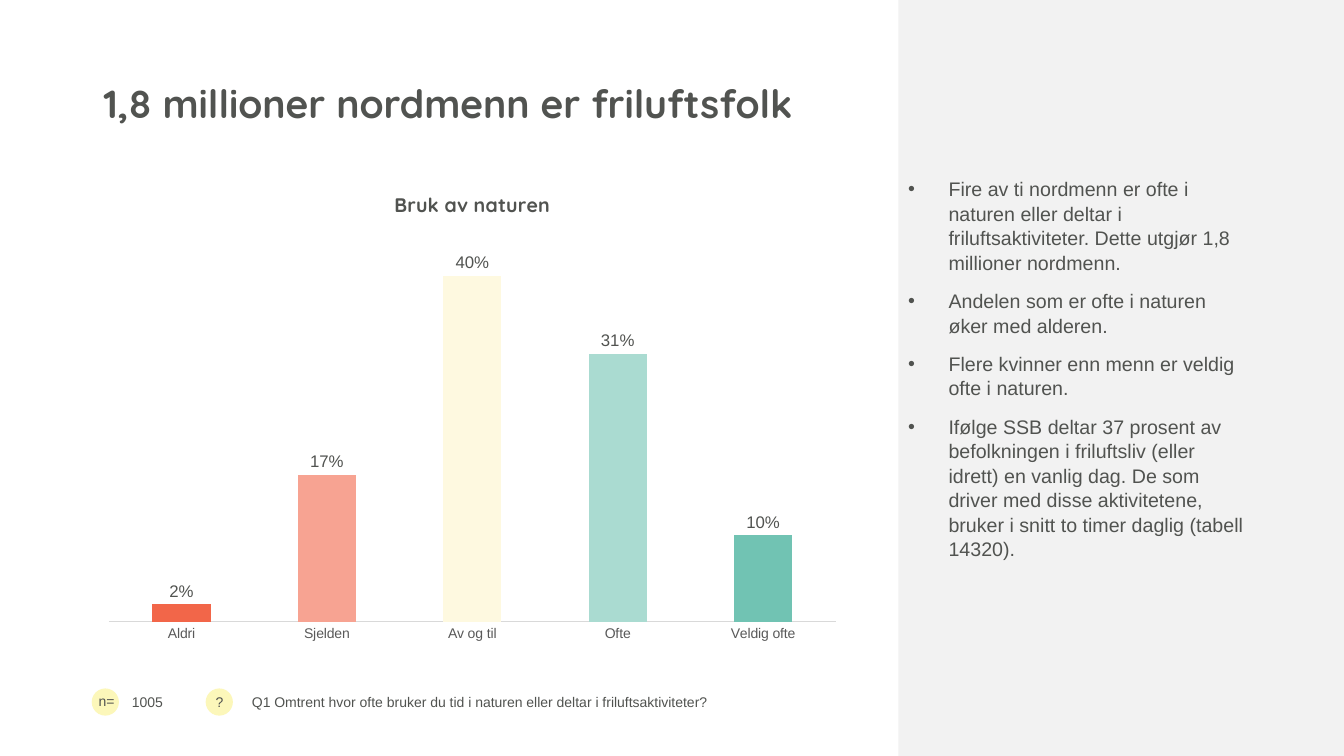
from pptx import Presentation
from pptx.chart.data import CategoryChartData
from pptx.dml.color import RGBColor
from pptx.enum.chart import XL_CHART_TYPE, XL_LABEL_POSITION, XL_TICK_MARK
from pptx.enum.shapes import MSO_SHAPE
from pptx.enum.text import MSO_ANCHOR
from pptx.util import Inches, Pt
from lxml.etree import SubElement
from pptx.oxml.ns import qn

INK = RGBColor(0x51, 0x53, 0x50)
GREY = RGBColor(0x59, 0x59, 0x59)
RULE = RGBColor(0xD9, 0xD9, 0xD9)
PANEL = RGBColor(0xF2, 0xF2, 0xF2)
DOT = RGBColor(0xFC, 0xF7, 0xBA)
TEAL = RGBColor(0x71, 0xC3, 0xB3)
BARS = [RGBColor(0xF2, 0x66, 0x49), RGBColor(0xF7, 0xA3, 0x92),
        RGBColor(0xFE, 0xF9, 0xE0), RGBColor(0xAA, 0xDB, 0xD1), TEAL]

deck = Presentation()
deck.slide_width, deck.slide_height = Inches(13.33), Inches(7.5)
slide = deck.slides.add_slide(deck.slide_layouts[6])
shapes = slide.shapes

LEFT, TOP, SPLIT, RIGHT = 0.93, 1.7, 8.91, 12.45
FOOT, ROUND = 6.83, 0.27


def style(font, size, name="Arial", color=INK, bold=False):
    font.size, font.name, font.bold = Pt(size), name, bold
    font.color.rgb = color


def text(lines, x, y, w, h, size=10, anchor=MSO_ANCHOR.TOP, bullet=False,
         gap=0, line=1.0, **look):
    frame = shapes.add_textbox(*map(Inches, (x, y, w, h))).text_frame
    frame.word_wrap, frame.vertical_anchor = True, anchor
    for i, words in enumerate(lines):
        para = frame.paragraphs[0] if i == 0 else frame.add_paragraph()
        para.line_spacing = line
        if i:
            para.space_before = Pt(gap)
        if bullet:
            props = para._p.get_or_add_pPr()
            props.set("marL", str(Inches(0.4)))
            props.set("indent", str(-Inches(0.4)))
            SubElement(props, qn("a:buFont")).set("typeface", "Arial")
            SubElement(props, qn("a:buChar")).set("char", "•")
        run = para.add_run()
        run.text = words
        style(run.font, size, **look)


blocks = [
    (MSO_SHAPE.RECTANGLE, SPLIT, 0, 13.33 - SPLIT, 7.5, PANEL),
    (MSO_SHAPE.OVAL, 0.91, FOOT, ROUND, ROUND, DOT),
    (MSO_SHAPE.OVAL, 2.04, FOOT, ROUND, ROUND, DOT),
]
for kind, x, y, w, h, color in blocks:
    block = shapes.add_shape(kind, *map(Inches, (x, y, w, h)))
    block.shadow.inherit = False
    block.fill.solid()
    block.fill.fore_color.rgb = color
    block.line.fill.background()

text(["1,8 millioner nordmenn er friluftsfolk"], LEFT, 0.39, RIGHT - LEFT, 0.92,
     size=28, anchor=MSO_ANCHOR.BOTTOM, line=0.9, name="Quicksand", bold=True)
text(["n="], 0.88, 6.82, 0.45, ROUND)
text(["?"], 2.04, FOOT, 0.3, ROUND)
text(["1005"], 1.21, FOOT, 0.74, ROUND, anchor=MSO_ANCHOR.MIDDLE)
text(["Q1 Omtrent hvor ofte bruker du tid i naturen eller deltar i friluftsaktiviteter?"],
     2.4, 6.67, RIGHT - 2.4, 0.58, anchor=MSO_ANCHOR.MIDDLE)
text([
    "Fire av ti nordmenn er ofte i naturen eller deltar i friluftsaktiviteter. "
    "Dette utgjør 1,8 millioner nordmenn.",
    "Andelen som er ofte i naturen øker med alderen.",
    "Flere kvinner enn menn er veldig ofte i naturen.",
    "Ifølge SSB deltar 37 prosent av befolkningen i friluftsliv (eller idrett) "
    "en vanlig dag. De som driver med disse aktivitetene, bruker i snitt to "
    "timer daglig (tabell 14320).",
], SPLIT, TOP, RIGHT - SPLIT, 4.78, size=14, bullet=True, gap=10, line=1.04)

data = CategoryChartData(number_format="0%")
data.categories = ["Aldri", "Sjelden", "Av og til", "Ofte", "Veldig ofte"]
data.add_series("Series 1", [0.02, 0.17, 0.4, 0.31, 0.1])
chart = shapes.add_chart(XL_CHART_TYPE.COLUMN_CLUSTERED,
                         *map(Inches, (LEFT, TOP, 7.51, 4.76)), data).chart
style(chart.font, 10)
chart.has_legend = False
chart.has_title = True
head = chart.chart_title.text_frame.paragraphs[0].add_run()
head.text = "Bruk av naturen"
style(head.font, 14, name="Quicksand", bold=True)

base = chart.category_axis
base.major_tick_mark = base.minor_tick_mark = XL_TICK_MARK.NONE
base.format.line.color.rgb = RULE
base.format.line.width = Pt(0.75)
style(base.tick_labels.font, 10, color=GREY)
scale = chart.value_axis
scale.visible = scale.has_major_gridlines = False
scale.minimum_scale, scale.maximum_scale = 0, 0.45

plot = chart.plots[0]
plot.gap_width, plot.vary_by_categories = 150, False
bars = plot.series[0]
bars.invert_if_negative = False
bars.format.fill.solid()
bars.format.fill.fore_color.rgb = TEAL
for i, color in enumerate(BARS):
    fill = bars.points[i].format.fill
    fill.solid()
    fill.fore_color.rgb = color
tags = bars.data_labels
tags.show_value = True
tags.number_format, tags.number_format_is_linked = "0%", False
tags.position = XL_LABEL_POSITION.OUTSIDE_END
style(tags.font, 12)

deck.save("out.pptx")
